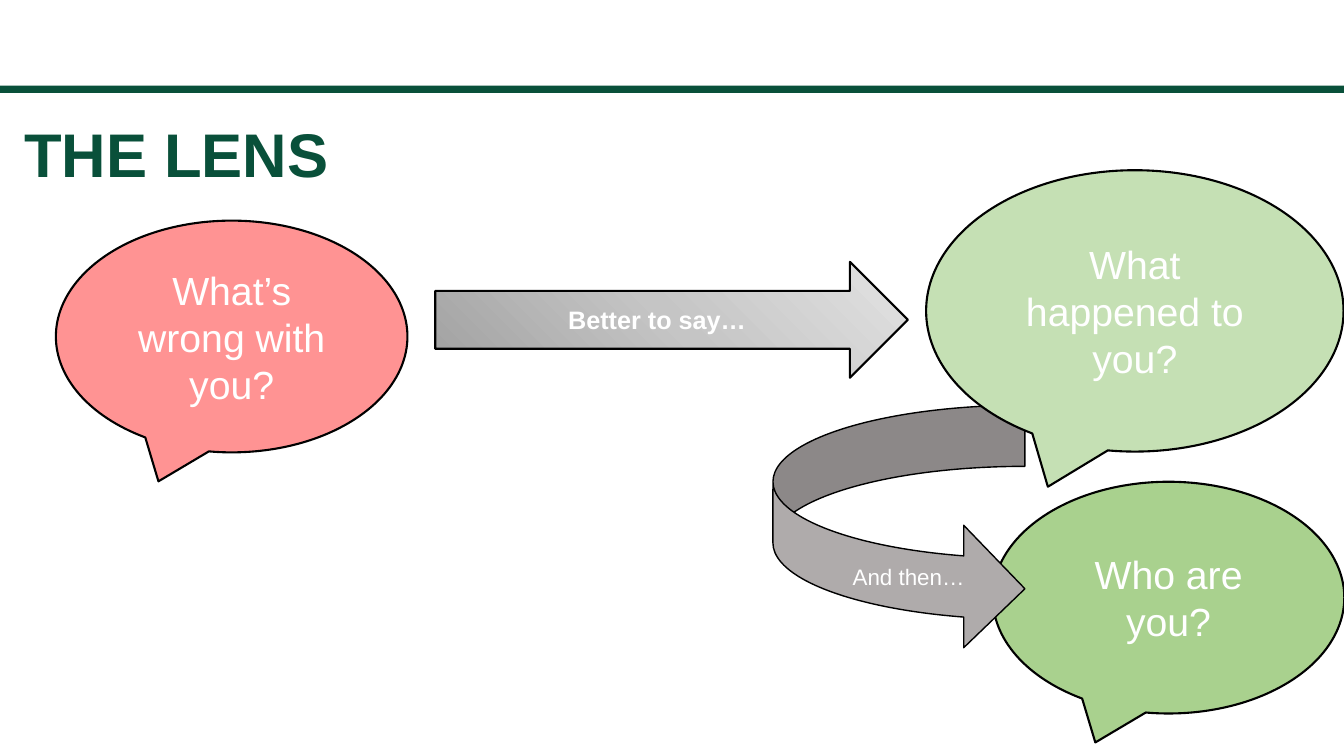
from copy import deepcopy
from dataclasses import dataclass

from pptx import Presentation
from pptx.dml.color import RGBColor
from pptx.enum.shapes import MSO_SHAPE
from pptx.enum.text import MSO_ANCHOR, MSO_AUTO_SIZE, PP_ALIGN
from pptx.util import Cm, Pt

CALLOUT = MSO_SHAPE.OVAL_CALLOUT
RIGHT_ARROW = MSO_SHAPE.RIGHT_ARROW
CURVED_ARROW = MSO_SHAPE.CURVED_RIGHT_ARROW
BAR = MSO_SHAPE.RECTANGLE
CENTER, LEFT = PP_ALIGN.CENTER, PP_ALIGN.LEFT
TOP, MIDDLE = MSO_ANCHOR.TOP, MSO_ANCHOR.MIDDLE
NO_AUTOFIT = MSO_AUTO_SIZE.NONE

GREEN = "09503A"
WHITE = "FFFFFF"
BLACK = "000000"
ARROW_GRADIENT = ("A0A0A0", "C5C5C5", "E3E3E3")


@dataclass
class Figure:
    """A filled, outlined shape with its label; lengths in centimetres."""
    kind: int
    left: float
    top: float
    width: float
    height: float
    text: str
    fill: str | tuple[str, ...]
    size: int = 28
    bold: bool = False
    line_width: float = 1.5
    alignment: int = CENTER
    # left, top, right, bottom
    margins: tuple[float, float, float, float] = (0.25, 0.13, 0.25, 0.13)


FIGURES = [
    Figure(CALLOUT, 1.41, 5.56, 8.86, 5.84, "What’s wrong with you?", "FF9393"),
    Figure(RIGHT_ARROW, 10.97, 6.6, 11.91, 2.92, "Better to say…",
           ARROW_GRADIENT, size=18, bold=True),
    Figure(CALLOUT, 25.02, 12.14, 8.86, 5.84, "Who are you?", "A9D18E"),
    Figure(CURVED_ARROW, 19.48, 10.21, 6.35, 6.17, "And then…", "AFABAB",
           size=16, line_width=1, alignment=LEFT, margins=(2.01, 2.46, 0, 0)),
    Figure(CALLOUT, 23.34, 4.29, 10.52, 7.09, "What happened to you?", "C5E0B4"),
]


def color(value: str) -> RGBColor:
    return RGBColor.from_string(value)


def fill_gradient(shape, colors: tuple[str, ...]) -> None:
    """Spread the colours evenly from the lower left to the upper right."""
    shape.fill.gradient()
    shape.fill.gradient_angle = 45
    first_stop = shape.fill.gradient_stops[0]._gs
    while len(shape.fill.gradient_stops) < len(colors):
        first_stop.addnext(deepcopy(first_stop))
    for index, (stop, value) in enumerate(zip(shape.fill.gradient_stops, colors)):
        stop.color.rgb = color(value)
        stop.position = index / (len(colors) - 1)


def set_margins(frame, left: float, top: float, right: float, bottom: float) -> None:
    frame.margin_left, frame.margin_top = Cm(left), Cm(top)
    frame.margin_right, frame.margin_bottom = Cm(right), Cm(bottom)


def write(frame, text: str, size: int, text_color: str, bold: bool,
          alignment: int, anchor: int) -> None:
    frame.word_wrap = True
    frame.auto_size = NO_AUTOFIT
    frame.vertical_anchor = anchor
    paragraph = frame.paragraphs[0]
    paragraph.text = text
    paragraph.alignment = alignment
    paragraph.font.name = "Arial"
    paragraph.font.size = Pt(size)
    paragraph.font.bold = bold
    paragraph.font.color.rgb = color(text_color)


def add_header_bar(slide) -> None:
    bar = slide.shapes.add_shape(BAR, Cm(0), Cm(2.16), Cm(33.87), Cm(0.18))
    bar.shadow.inherit = False
    bar.fill.solid()
    bar.fill.fore_color.rgb = color(GREEN)
    bar.line.fill.background()


def set_title(slide) -> None:
    title = slide.shapes.title
    title.left, title.top = Cm(0.51), Cm(2.88)
    title.width, title.height = Cm(30.48), Cm(2.87)
    set_margins(title.text_frame, 0.1, 0.05, 0.1, 0.05)
    write(title.text_frame, "THE LENS", 44, GREEN, True, LEFT, TOP)


def add_figure(slide, figure: Figure) -> None:
    shape = slide.shapes.add_shape(
        figure.kind, Cm(figure.left), Cm(figure.top),
        Cm(figure.width), Cm(figure.height))
    shape.shadow.inherit = False
    if isinstance(figure.fill, str):
        shape.fill.solid()
        shape.fill.fore_color.rgb = color(figure.fill)
    else:
        fill_gradient(shape, figure.fill)
    shape.line.color.rgb = color(BLACK)
    shape.line.width = Pt(figure.line_width)
    set_margins(shape.text_frame, *figure.margins)
    write(shape.text_frame, figure.text, figure.size, WHITE, figure.bold,
          figure.alignment, MIDDLE)


def main() -> None:
    presentation = Presentation()
    presentation.slide_width, presentation.slide_height = Cm(33.87), Cm(19.05)
    slide = presentation.slides.add_slide(presentation.slide_layouts[5])
    add_header_bar(slide)
    set_title(slide)
    for figure in FIGURES:
        add_figure(slide, figure)
    presentation.save("out.pptx")


if __name__ == "__main__":
    main()
